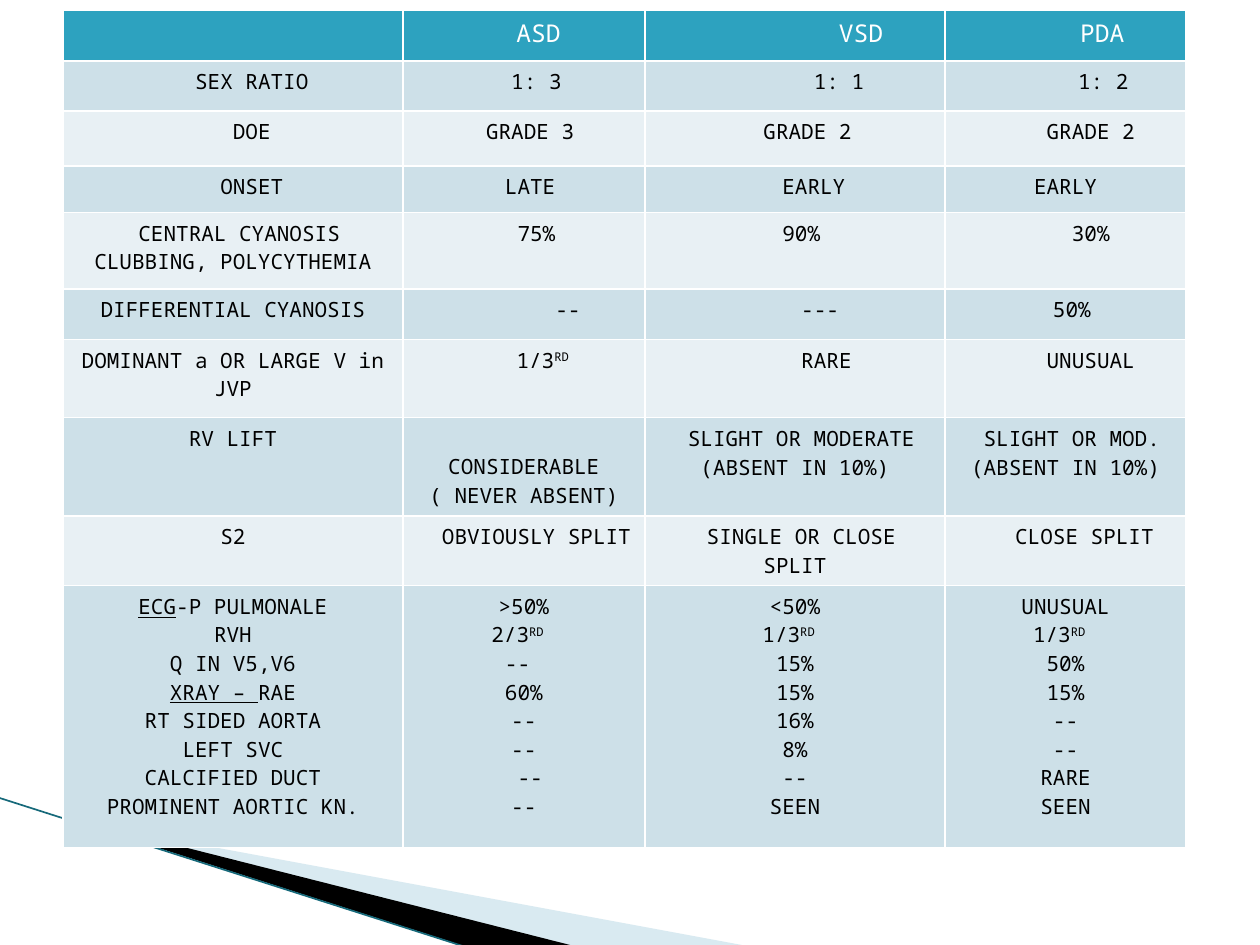
from lxml.etree import SubElement
from pptx import Presentation
from pptx.dml.color import RGBColor as RGB
from pptx.enum.shapes import MSO_CONNECTOR
from pptx.enum.text import PP_ALIGN
from pptx.oxml.ns import qn
from pptx.util import Cm, Pt

COLORS = {"header": "2DA2BF", "dark band": "CDE0E8", "light band": "E8F0F4",
          "white": "FFFFFF", "black": "000000", "pale wedge": "A0CBDC",
          "edge": "16697A"}
FONT = "Noto Sans Mono"
CHAR_WIDTH = 0.6  # of the font size

COL_WIDTHS = [6.85, 4.88, 6.05, 4.86]
ROW_HEIGHTS = [1.02, 1.01, 1.11, 0.93, 1.55, 1.01, 1.58, 1.45, 1.12, 5.28]

# "_" switches underline, "^" switches superscript
ROWS = [
    ["", "ASD", "VSD", "PDA"],
    ["SEX RATIO", "1: 3", "1: 1", "1: 2"],
    ["DOE", "GRADE 3", "GRADE 2", "GRADE 2"],
    ["ONSET", "LATE", "EARLY", "EARLY"],
    ["CENTRAL CYANOSIS\nCLUBBING, POLYCYTHEMIA", "75%", "90%", "30%"],
    ["DIFFERENTIAL CYANOSIS", "--", "---", "50%"],
    ["DOMINANT a OR LARGE V in JVP", "1/3^RD^", "RARE", "UNUSUAL"],
    ["RV LIFT", "CONSIDERABLE\n( NEVER ABSENT)",
     "SLIGHT OR MODERATE (ABSENT IN 10%)", "SLIGHT OR MOD. (ABSENT IN 10%)"],
    ["S2", "OBVIOUSLY SPLIT", "SINGLE OR CLOSE SPLIT", "CLOSE SPLIT"],
    ["_ECG_-P PULMONALE\nRVH\nQ IN V5,V6\n_XRAY – _RAE\nRT SIDED AORTA\n"
     "LEFT SVC\nCALCIFIED DUCT\nPROMINENT AORTIC KN.",
     ">50%\n2/3^RD^ \n-- \n60%\n--\n--\n --\n--",
     "<50%\n1/3^RD^ \n15%\n15%\n16%\n8%\n--\nSEEN",
     "UNUSUAL\n1/3^RD^ \n50%\n15%\n--\n--\nRARE\nSEEN"],
]
# First-line indent of each cell, in characters
INDENTS = [[0, 2, 9, 5], [3, 2, 7, 6], [3, 1, 2, 4], [3, 1, 3, 0], [1, 2, 1, 4],
           [0, 7, 4, 1], [0, 3, 5, 4], [0, 0, 1, 1], [0, 2, 1, 3], [0, 0, 0, 0]]


def color(name):
    return RGB.from_string(COLORS[name])


def add_runs(p, text):
    """Add the text as runs, following the "_" and "^" switches."""
    underline = raised = False
    for i, part in enumerate(text.replace("^", "_^").split("_")):
        if part.startswith("^"):
            raised, part = not raised, part[1:]
        elif i:
            underline = not underline
        if part:
            r = p.add_run()
            r.text = part
            if underline:
                r.font.underline = True
            if raised:
                r.font._element.set("baseline", "30000")


prs = Presentation()
prs.slide_width, prs.slide_height = Cm(25.4), Cm(19.05)
s = prs.slides.add_slide(prs.slide_layouts[6])

# Corner decoration: the outlines reach beyond their frames
wedges = [
    ("pale wedge", 40, (1.98, 13.89, 10.57, 4.01),
     [(1.4, 16.54), (15.11, 19.08), (11.58, 19.08), (1.4, 16.51)]),
    ("black", 100, (-0.15, 16.08, 10.57, 2.34),
     [(1.35, 16.48), (11.61, 19.08), (9.45, 19.1), (1.37, 16.51)]),
]
for name, opacity, frame, points in wedges:
    left, top, width, height = [Cm(v) for v in frame]
    corners = [(Cm(x), Cm(y)) for x, y in points]
    builder = s.shapes.build_freeform(*corners[0])
    builder.add_line_segments(corners[1:])
    sp = builder.convert_to_shape()
    sp.left, sp.top, sp.width, sp.height = left, top, width, height
    outline = sp._element.spPr.find(".//" + qn("a:path"))
    outline.set("w", str(int(width)))
    outline.set("h", str(int(height)))
    # The closing segment repeats the first corner
    for pt, (x, y) in zip(outline.iter(qn("a:pt")), corners + corners[:1]):
        pt.set("x", str(int(x - left)))
        pt.set("y", str(int(y - top)))
    sp.shadow.inherit = False
    sp.line.fill.background()
    sp.fill.solid()
    sp.fill.fore_color.rgb = color(name)
    if opacity < 100:
        rgb = sp._element.spPr.find(".//" + qn("a:srgbClr"))
        SubElement(rgb, qn("a:alpha")).set("val", str(opacity * 1000))

edge = s.shapes.add_connector(MSO_CONNECTOR.STRAIGHT,
                              Cm(-0.03), Cm(16.08), Cm(9.42), Cm(19.1))
edge.line.color.rgb = color("edge")
edge.line.width = Pt(0.95)
SubElement(edge._element.spPr, qn("a:effectLst"))

# Comparison table; its default style draws the white rules
table = s.shapes.add_table(len(ROWS), len(COL_WIDTHS), Cm(1.27), Cm(0.2),
                           Cm(sum(COL_WIDTHS)), Cm(sum(ROW_HEIGHTS))).table
for col, width in zip(table.columns, COL_WIDTHS):
    col.width = Cm(width)
for row, height in zip(table.rows, ROW_HEIGHTS):
    row.height = Cm(height)

for i, (texts, indents) in enumerate(zip(ROWS, INDENTS)):
    if i == 0:
        band, ink, size = "header", "white", 14
    else:
        band, ink, size = ("dark band" if i % 2 else "light band"), "black", 12
    for j, (text, indent) in enumerate(zip(texts, indents)):
        cell = table.cell(i, j)
        cell.fill.solid()
        cell.fill.fore_color.rgb = color(band)
        tf = cell.text_frame
        for k, line in enumerate(text.split("\n")):
            p = tf.add_paragraph() if k else tf.paragraphs[0]
            p.alignment = PP_ALIGN.CENTER
            if k == 0 and indent:
                pPr = p._p.get_or_add_pPr()
                pPr.set("marL", "0")
                pPr.set("indent", str(int(Pt(indent * size * CHAR_WIDTH))))
            add_runs(p, line)
            for r in p.runs:
                r.font.name = FONT
                r.font.size = Pt(size)
                r.font.bold = False
                r.font.color.rgb = color(ink)

# The ASD entry for RV lift starts one line lower
table.cell(7, 1).margin_top = Cm(0.7)

prs.save("out.pptx")
